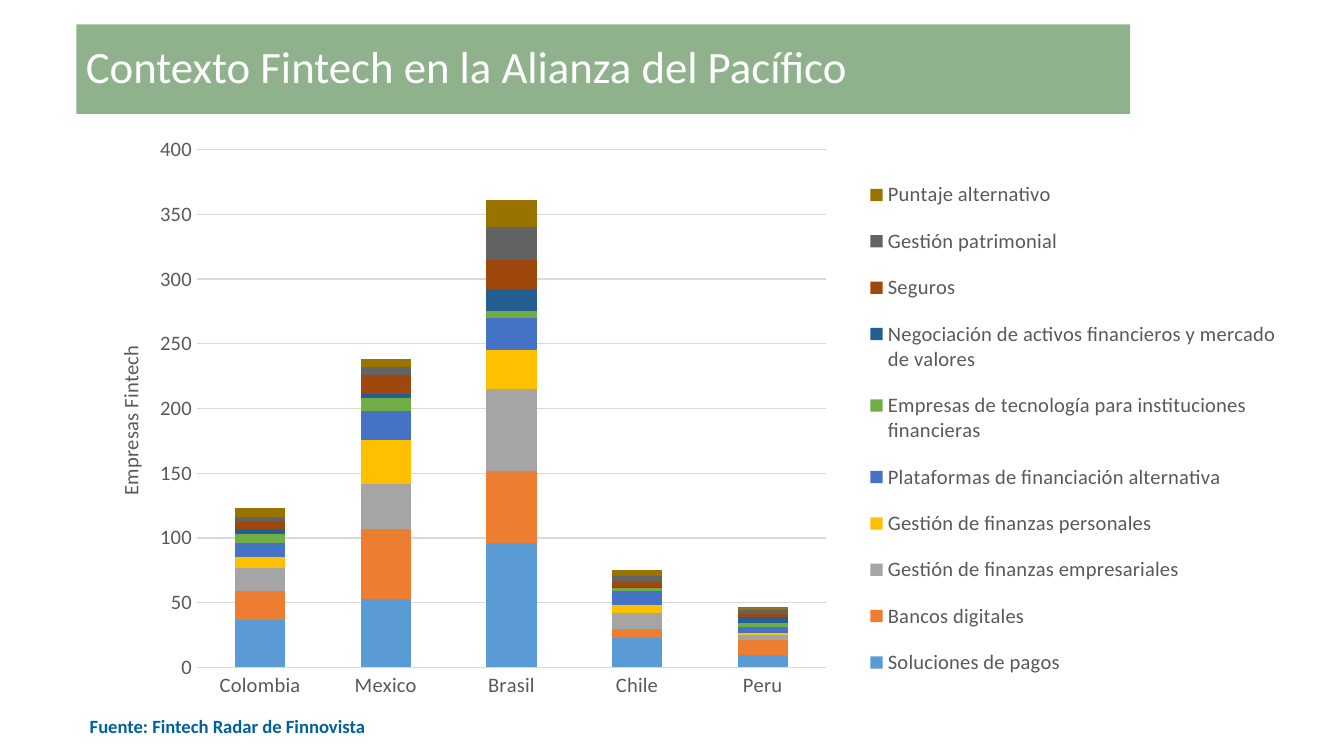
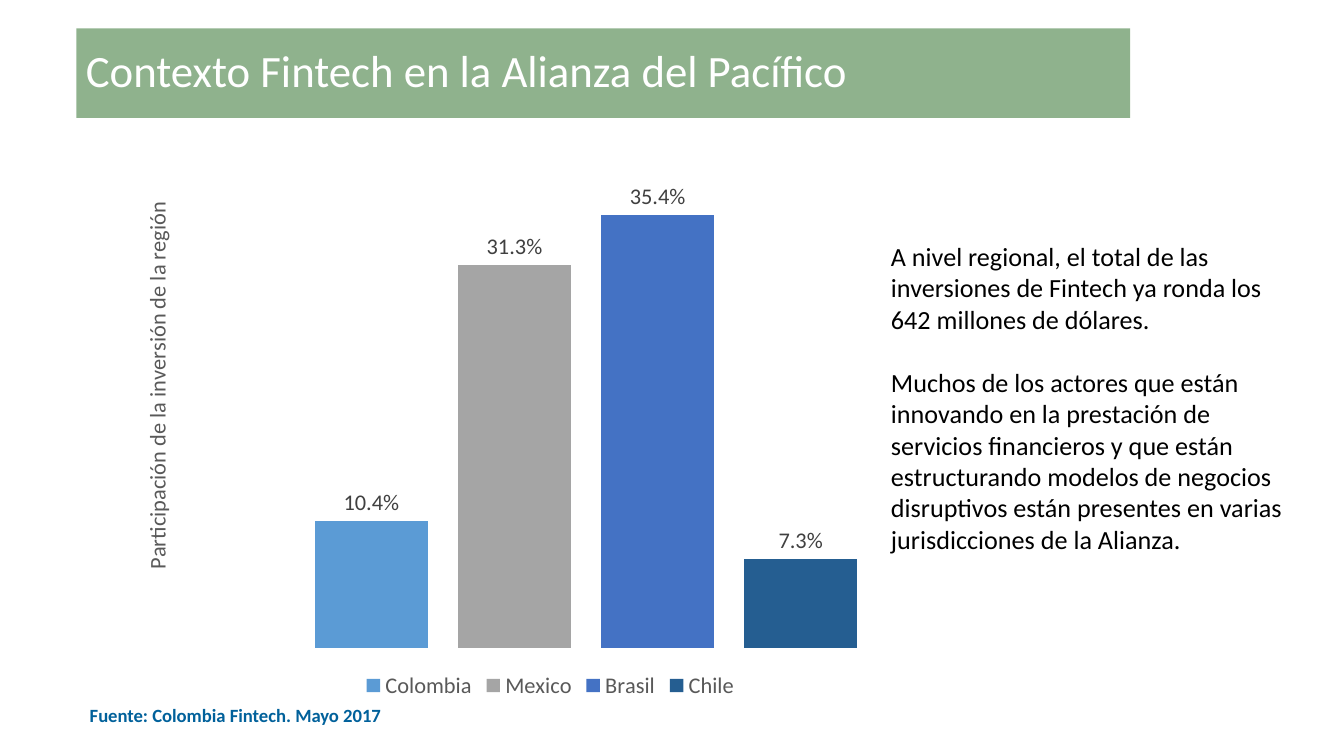
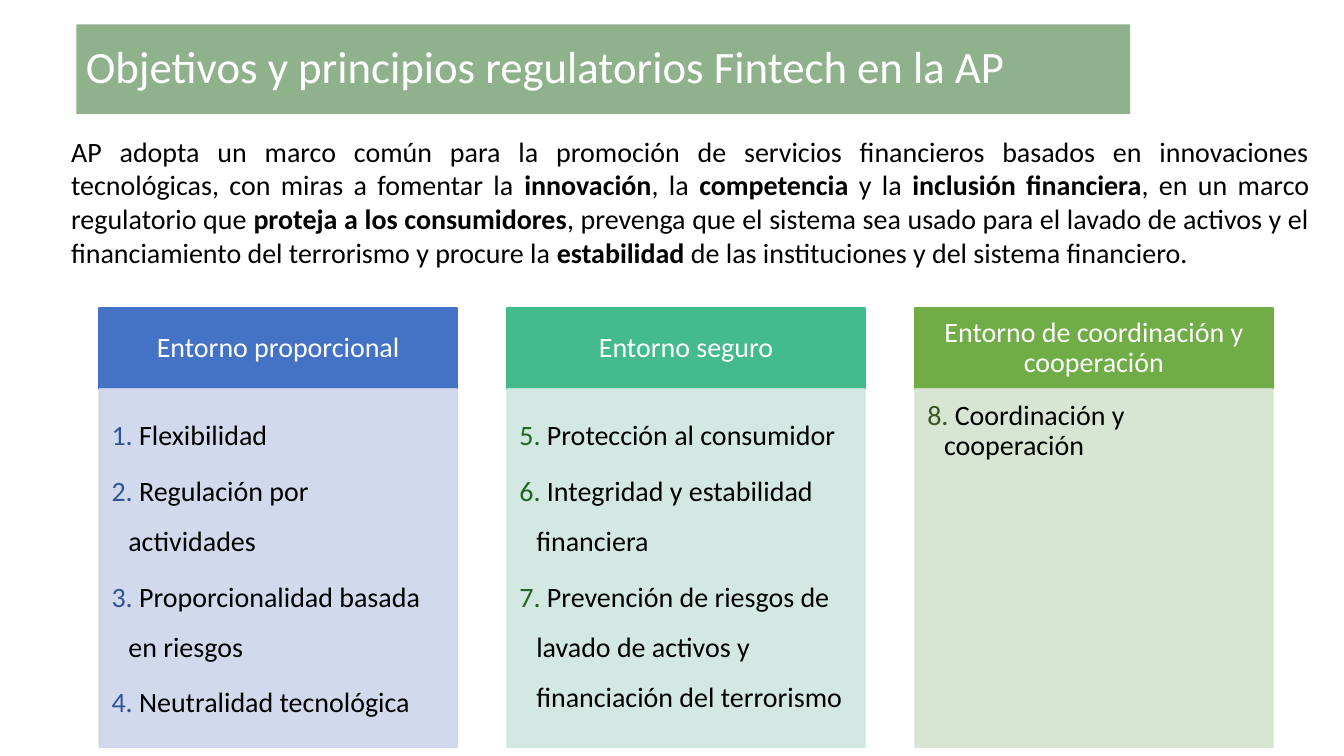
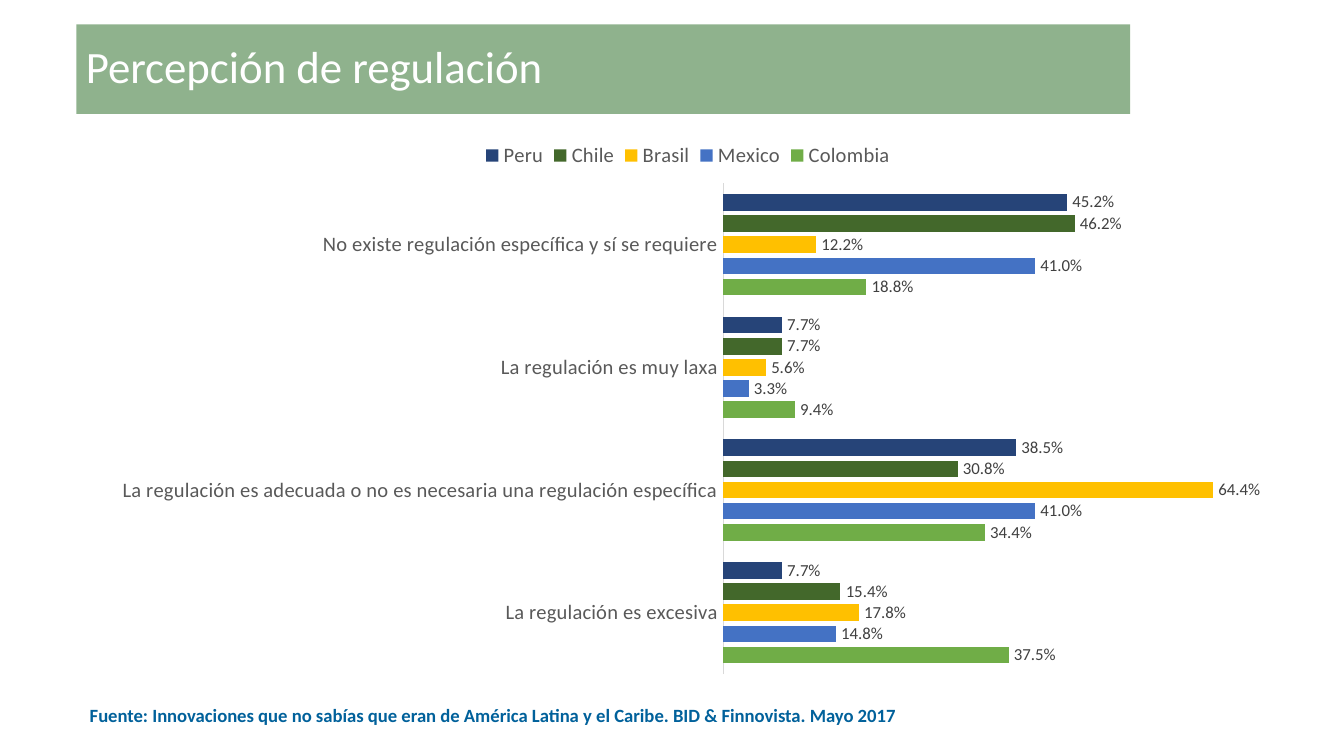
import pptx
import pptx.chart.data
import pptx.dml.color
import pptx.enum.chart
import pptx.enum.shapes
import pptx.enum.text
import pptx.oxml
import pptx.oxml.ns
import pptx.util

Pt = pptx.util.Pt
RGBColor = pptx.dml.color.RGBColor
qn = pptx.oxml.ns.qn
ChartType = pptx.enum.chart.XL_CHART_TYPE
LegendPosition = pptx.enum.chart.XL_LEGEND_POSITION
Anchor = pptx.enum.text.MSO_ANCHOR
Align = pptx.enum.text.PP_ALIGN

FONT = "Calibri"
WHITE = RGBColor(0xFF, 0xFF, 0xFF)
BLACK = RGBColor(0x00, 0x00, 0x00)
DARK_GREEN = RGBColor(0x21, 0x66, 0x1C)
SOURCE_BLUE = RGBColor(0x01, 0x61, 0x9B)
CHART_TEXT = RGBColor(0x59, 0x59, 0x59)
LABEL_TEXT = RGBColor(0x40, 0x40, 0x40)
RULE_GREY = RGBColor(0xD9, 0xD9, 0xD9)
SKY = RGBColor(0x5B, 0x9B, 0xD5)
ORANGE = RGBColor(0xED, 0x7D, 0x31)
GREY = RGBColor(0xA5, 0xA5, 0xA5)
GOLD = RGBColor(0xFF, 0xC0, 0x00)
BLUE = RGBColor(0x44, 0x72, 0xC4)
GREEN = RGBColor(0x70, 0xAD, 0x47)
DEEP_BLUE = RGBColor(0x25, 0x5E, 0x91)
RUST = RGBColor(0x9E, 0x48, 0x0E)
DARK_GREY = RGBColor(0x63, 0x63, 0x63)
OLIVE = RGBColor(0x99, 0x73, 0x00)
FOREST = RGBColor(0x43, 0x68, 0x2B)
NAVY = RGBColor(0x26, 0x44, 0x78)
TEAL = RGBColor(0x43, 0xBB, 0x8D)
PALE_BLUE = RGBColor(0xCF, 0xD5, 0xEA)
PALE_TEAL = RGBColor(0xCF, 0xE6, 0xE0)
PALE_GREEN = RGBColor(0xD5, 0xE3, 0xCF)
NUMBER_BLUE = RGBColor(0x2F, 0x55, 0x97)
NUMBER_GREEN = RGBColor(0x38, 0x57, 0x23)

CONTEXT_TITLE = "Contexto Fintech en la Alianza del Pacífico"

COMPANY_COUNTRIES = ["Colombia", "Mexico", "Brasil", "Chile", "Peru"]
COMPANIES = [
    ("Soluciones de pagos", SKY, (37, 53, 96, 23, 10)),
    ("Bancos digitales", ORANGE, (22, 54, 56, 7, 11)),
    ("Gestión de finanzas empresariales", GREY, (18, 35, 63, 12, 4)),
    ("Gestión de finanzas personales", GOLD, (8, 34, 30, 6, 2)),
    ("Plataformas de financiación alternativa", BLUE, (11, 22, 25, 11, 4)),
    ("Empresas de tecnología para instituciones financieras", GREEN, (7, 10, 5, 2, 3)),
    ("Negociación de activos financieros y mercado de valores", DEEP_BLUE, (4, 3, 17, 1, 5)),
    ("Seguros", RUST, (6, 15, 23, 4, 2)),
    ("Gestión patrimonial", DARK_GREY, (3, 6, 25, 5, 3)),
    ("Puntaje alternativo", OLIVE, (7, 6, 21, 4, 3)),
]
INVESTMENT = [
    ("Colombia", SKY, (0.104,)),
    ("Mexico", GREY, (0.313,)),
    ("Brasil", BLUE, (0.354,)),
    ("Chile", DEEP_BLUE, (0.073,)),
]
OPINIONS = [
    "La regulación es excesiva",
    "La regulación es adecuada o no es necesaria una regulación específica",
    "La regulación es muy laxa",
    "No existe regulación específica y sí se requiere",
]
PERCEPTION = [
    ("Colombia", GREEN, (0.375, 0.344, 0.094, 0.188)),
    ("Mexico", BLUE, (0.148, 0.41, 0.033, 0.41)),
    ("Brasil", GOLD, (0.178, 0.644, 0.056, 0.122)),
    ("Chile", FOREST, (0.154, 0.308, 0.077, 0.462)),
    ("Peru", NAVY, (0.077, 0.385, 0.077, 0.452)),
]
REGIONAL_NOTES = [
    "A nivel regional, el total de las inversiones de Fintech ya ronda los 642 millones de dólares.",
    "Muchos de los actores que están innovando en la prestación de servicios financieros y que "
    "están estructurando modelos de negocios disruptivos están presentes en varias jurisdicciones "
    "de la Alianza.",
]
FRAMEWORK = [
    ("AP adopta un marco común para la promoción de servicios financieros basados en innovaciones "
     "tecnológicas, con miras a fomentar la ", False),
    ("innovación", True),
    (", la ", False),
    ("competencia", True),
    (" y la ", False),
    ("inclusión financiera", True),
    (", en un marco regulatorio que ", False),
    ("proteja a los consumidores", True),
    (", prevenga que el sistema sea usado para el lavado de activos y el financiamiento del "
     "terrorismo y procure la ", False),
    ("estabilidad", True),
    (" de las instituciones y del sistema financiero.", False),
]
PRINCIPLES = [
    ("Entorno proporcional", BLUE, PALE_BLUE, NUMBER_BLUE, 1.5,
     ["Flexibilidad", "Regulación por actividades", "Proporcionalidad basada en riesgos",
      "Neutralidad tecnológica"]),
    ("Entorno seguro", TEAL, PALE_TEAL, DARK_GREEN, 1.5,
     ["Protección al consumidor", "Integridad y estabilidad financiera",
      "Prevención de riesgos de lavado de activos y financiación del terrorismo"]),
    ("Entorno de coordinación y cooperación", GREEN, PALE_GREEN, NUMBER_GREEN, 0.9,
     ["Coordinación y cooperación"]),
]


def set_font(font, size, color, bold=None):
    """Apply the deck's typeface with a size, colour and weight."""
    font.name = FONT
    font.size = Pt(size)
    font.color.rgb = color
    font.bold = bold


def set_alpha(panel, percent):
    """Make the fill and outline of a panel partly transparent."""
    for color_element in panel._element.spPr.iter(qn("a:srgbClr")):
        color_element.append(pptx.oxml.parse_xml(
            f'<a:alpha {pptx.oxml.ns.nsdecls("a")} val="{percent * 1000}"/>'))


def add_panel(slide, box, color, margins, alpha=None, outlined=False):
    """Draw a filled rectangle and return its text frame."""
    panel = slide.shapes.add_shape(
        pptx.enum.shapes.MSO_SHAPE.RECTANGLE, *(Pt(length) for length in box))
    panel.shadow.inherit = False
    panel.fill.solid()
    panel.fill.fore_color.rgb = color
    if outlined:
        panel.line.color.rgb = color
        panel.line.width = Pt(1)
    else:
        panel.line.fill.background()
    if alpha:
        set_alpha(panel, alpha)
    frame = panel.text_frame
    frame.word_wrap = True
    (frame.margin_left, frame.margin_top,
     frame.margin_right, frame.margin_bottom) = (Pt(margin) for margin in margins)
    return frame


def add_text(slide, box):
    """Add a wrapping text box and return its text frame."""
    frame = slide.shapes.add_textbox(*(Pt(length) for length in box)).text_frame
    frame.word_wrap = True
    return frame


def add_title(slide, title, top=13):
    """Place the translucent green title band."""
    frame = add_panel(slide, (41, top, 564.5, 48), DARK_GREEN, (5, 3, 5, 3), alpha=50)
    frame.vertical_anchor = Anchor.MIDDLE
    heading = frame.paragraphs[0]
    heading.text = title
    heading.alignment = Align.LEFT
    heading.line_spacing = 0.9
    set_font(heading.font, 24, WHITE)


def add_source(slide, citation, top=373.7):
    """Place the source line at the foot of the slide."""
    source = add_text(slide, (41, top, 540.7, 19.4)).paragraphs[0]
    source.text = citation
    set_font(source.font, 10, SOURCE_BLUE, True)


def set_layout(element, x, y, w=None, h=None, inner=False):
    """Fix a chart part at fractions of the chart area."""
    layout = element.find(qn("c:layout"))
    if layout is not None:
        element.remove(layout)
    target = '<c:layoutTarget val="inner"/>' if inner else ""
    modes = '<c:xMode val="edge"/><c:yMode val="edge"/>'
    lengths = "".join(f'<c:{key} val="{value}"/>'
                      for key, value in zip("xywh", (x, y, w, h)) if value is not None)
    layout = pptx.oxml.parse_xml(
        f'<c:layout {pptx.oxml.ns.nsdecls("c")}><c:manualLayout>{target}{modes}{lengths}'
        '</c:manualLayout></c:layout>')
    overlay = element.find(qn("c:overlay"))
    if overlay is None:
        element.insert(0, layout)
    else:
        overlay.addprevious(layout)


def add_bars(slide, box, kind, categories, rows, size, gap, overlap, scale, legend, plot_area,
             label_size=None):
    """Add a bar chart with the deck's fonts, legend and series colours."""
    numbers = pptx.chart.data.CategoryChartData(number_format="0.0%" if label_size else "General")
    numbers.categories = categories
    for name, _, values in rows:
        numbers.add_series(name, values)
    chart = slide.shapes.add_chart(kind, *(Pt(length) for length in box), numbers).chart
    set_font(chart.font, size, CHART_TEXT)
    chart.has_title = False
    chart.has_legend = True
    chart.legend.position = legend
    chart.legend.include_in_layout = False
    set_font(chart.legend.font, size, CHART_TEXT)
    bars = chart.plots[0]
    bars.vary_by_categories = False
    bars.gap_width = gap
    bars.overlap = overlap
    for series, (_, color, _) in zip(bars.series, rows):
        series.format.fill.solid()
        series.format.fill.fore_color.rgb = color
        series.invert_if_negative = False
        if label_size:
            labels = series.data_labels
            labels.show_value = True
            labels.number_format = "0.0%"
            labels.number_format_is_linked = False
            labels.position = pptx.enum.chart.XL_LABEL_POSITION.OUTSIDE_END
            set_font(labels.font, label_size, LABEL_TEXT)
    for axis in (chart.category_axis, chart.value_axis):
        axis.major_tick_mark = pptx.enum.chart.XL_TICK_MARK.NONE
        axis.has_major_gridlines = False
        set_font(axis.tick_labels.font, size, CHART_TEXT)
    set_rule(chart.category_axis.format.line)
    chart.value_axis.format.line.fill.background()
    chart.value_axis.visible = not label_size
    chart.value_axis.minimum_scale = 0
    chart.value_axis.maximum_scale, chart.value_axis.major_unit = scale
    set_layout(chart._chartSpace.chart.plotArea, *plot_area, inner=True)
    return chart


def set_rule(line):
    """Give an axis or gridline its thin grey stroke."""
    line.color.rgb = RULE_GREY
    line.width = Pt(0.75)


def set_axis_title(axis, title, size, x, y):
    """Title a value axis at a fixed place in the chart."""
    axis.has_title = True
    heading = axis.axis_title.text_frame.paragraphs[0]
    heading.text = title
    set_font(heading.font, size, CHART_TEXT, False)
    axis.axis_title.text_frame._txBody.bodyPr.set("rot", "-5400000")
    set_layout(axis.axis_title._element, x, y)


def add_principles(slide, box, principle, first_number):
    """Place one column: a coloured heading over its numbered principles."""
    name, strong, pale, number_color, spacing, items = principle
    left, top, width, height = box
    header_height = 43.5
    header = add_panel(slide, (left, top, width, header_height), strong, (8.4, 5, 8.4, 5),
                       outlined=True)
    header.vertical_anchor = Anchor.MIDDLE
    heading = header.paragraphs[0]
    heading.text = name
    heading.alignment = Align.CENTER
    heading.line_spacing = 0.9
    set_font(heading.font, 15, WHITE)

    body = add_panel(slide, (left, top + header_height, width, height - header_height), pale,
                     (6.5, 6.5, 8.4, 9.4), alpha=90, outlined=True)
    body.vertical_anchor = Anchor.TOP
    for index, item in enumerate(items):
        line = body.paragraphs[0] if index == 0 else body.add_paragraph()
        line.text = " " + item
        line.alignment = Align.LEFT
        line.line_spacing = spacing
        line.space_after = Pt(2.7)
        properties = line._p.get_or_add_pPr()
        properties.set("marL", str(Pt(9)))
        properties.set("indent", str(-Pt(9)))
        namespace = pptx.oxml.ns.nsdecls("a")
        properties.append(pptx.oxml.parse_xml(
            f'<a:buClr {namespace}><a:srgbClr val="{number_color}"/></a:buClr>'))
        properties.append(pptx.oxml.parse_xml(
            f'<a:buAutoNum {namespace} type="arabicPeriod" startAt="{first_number}"/>'))
        set_font(line.font, 15, BLACK)


def build_companies(slide):
    """Fintech companies by country and segment."""
    add_title(slide, CONTEXT_TITLE)
    chart = add_bars(slide, (41, 67.7, 647.3, 311.8), ChartType.COLUMN_STACKED,
                     COMPANY_COUNTRIES, COMPANIES, 11, 150, 100, (400, 50),
                     LegendPosition.CORNER, (0.1, 0.04, 0.52, 0.89))
    chart.value_axis.has_major_gridlines = True
    set_rule(chart.value_axis.major_gridlines.format.line)
    set_axis_title(chart.value_axis, "Empresas Fintech", 11, 0.03, 0.37)
    set_layout(chart.legend._element, 0.65, 0.06, 0.35, 0.92)
    add_source(slide, "Fuente: Fintech Radar de Finnovista", 379.4)


def build_investment(slide):
    """Share of regional investment, with notes beside it."""
    chart = add_bars(slide, (54.7, 79.2, 480.2, 298.1), ChartType.COLUMN_CLUSTERED, ["1"],
                     INVESTMENT, 12, 219, -27, (0.4, 0.05), LegendPosition.BOTTOM,
                     (0.1, 0.02, 0.88, 0.88), 12)
    chart.category_axis.visible = False
    set_axis_title(chart.value_axis, "Participación de la inversión de la región", 12, 0.04, 0.09)
    notes = add_text(slide, (470.2, 125.3, 231.8, 211))
    for index, note in enumerate(REGIONAL_NOTES):
        paragraph = notes.paragraphs[0] if index == 0 else notes.add_paragraph()
        paragraph.text = note
        set_font(paragraph.font, 14, BLACK)
        if index:
            paragraph.space_before = Pt(17)
    add_source(slide, "Fuente: Colombia Fintech. Mayo 2017")
    add_title(slide, CONTEXT_TITLE, 15.2)


def build_principles(slide):
    """Regulatory framework over three columns of principles."""
    add_title(slide, "Objetivos y principios regulatorios Fintech en la AP")
    column_width, pitch, first_number = 191.5, 218.5, 1
    for column, principle in enumerate(PRINCIPLES):
        add_principles(slide, (53.3 + column * pitch, 165, column_width, 235.3), principle,
                       first_number)
        first_number += len(principle[-1])
    framework = add_text(slide, (31, 68.4, 677.5, 80)).paragraphs[0]
    framework.alignment = Align.JUSTIFY
    for wording, bold in FRAMEWORK:
        run = framework.add_run()
        run.text = wording
        set_font(run.font, 15, BLACK, bold)


def build_perception(slide):
    """Perception of regulation by country."""
    add_title(slide, "Percepción de regulación")
    chart = add_bars(slide, (51.8, 68.4, 633.6, 298.8), ChartType.BAR_CLUSTERED, OPINIONS,
                     PERCEPTION, 11, 130, -28, (0.7, 0.1), LegendPosition.TOP,
                     (0.53, 0.1, 0.45, 0.88), 9)
    set_layout(chart.legend._element, 0.32, 0.02, 0.36, 0.06)
    add_source(slide, "Fuente: Innovaciones que no sabías que eran de América Latina y el Caribe. "
                      "BID & Finnovista. Mayo 2017")


def main():
    """Build the four slides and save the deck."""
    deck = pptx.Presentation()
    deck.slide_width, deck.slide_height = Pt(720), Pt(405)
    for build in (build_companies, build_investment, build_principles, build_perception):
        build(deck.slides.add_slide(deck.slide_layouts[6]))
    deck.save("out.pptx")


if __name__ == "__main__":
    main()
